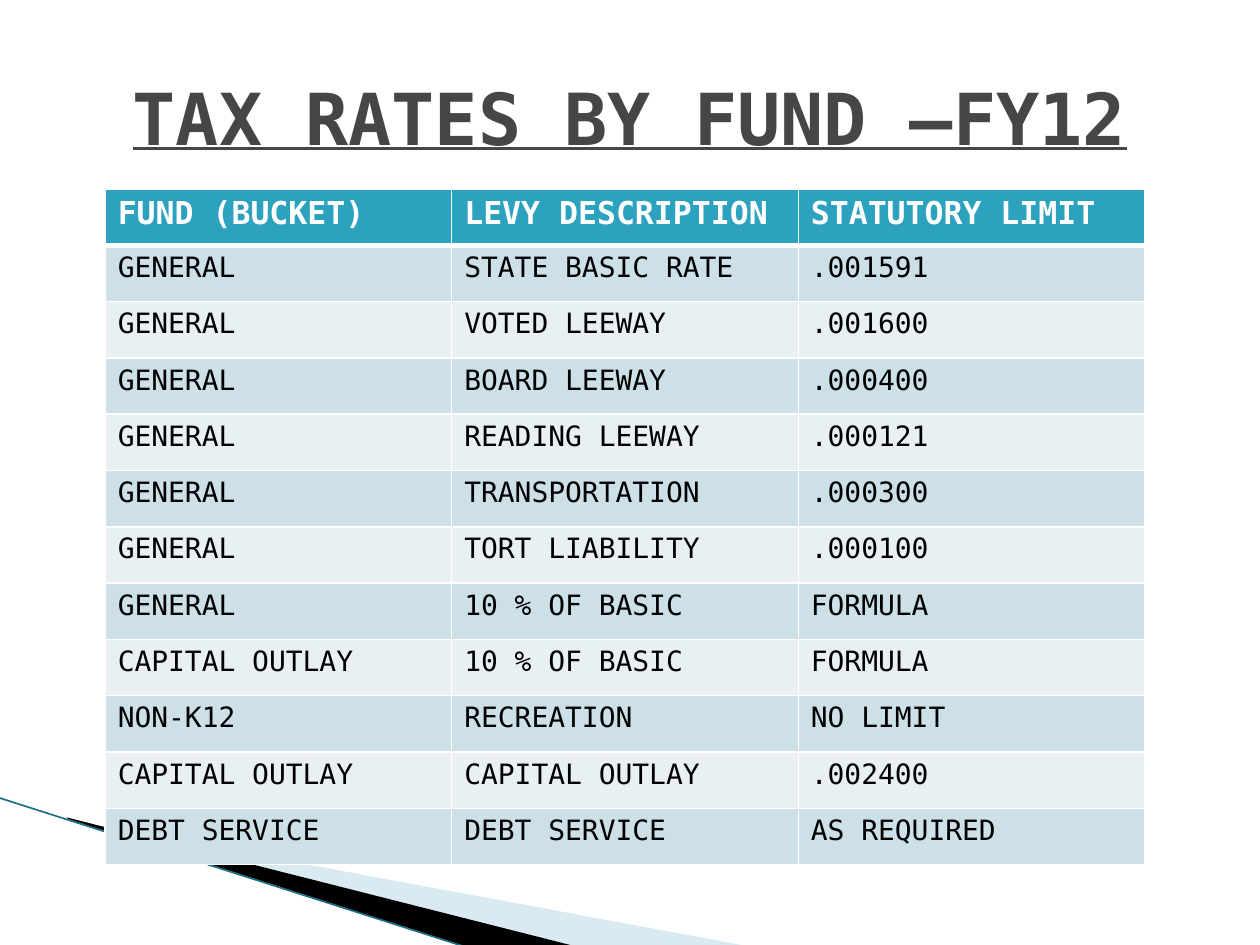
from dataclasses import dataclass

from lxml import etree
from pptx import Presentation
from pptx.dml.color import RGBColor
from pptx.enum.shapes import MSO_CONNECTOR
from pptx.enum.text import MSO_ANCHOR, PP_ALIGN
from pptx.oxml.ns import qn
from pptx.util import Cm, Pt

STRAIGHT = MSO_CONNECTOR.STRAIGHT
MIDDLE = MSO_ANCHOR.MIDDLE
CENTER = PP_ALIGN.CENTER


@dataclass(frozen=True)
class Theme:
    font: str = "DejaVu Sans Mono"
    title_size: int = 41
    header_size: int = 18
    body_size: int = 16
    title: str = "464646"
    header: str = "2DA2BF"
    bands: tuple = ("CDE0E8", "E8F0F4")
    white: str = "FFFFFF"
    black: str = "000000"
    pale: str = "A0CBDC"
    edge: str = "1C7085"


THEME = Theme()
ROWS = [
    ("FUND (BUCKET)", "LEVY DESCRIPTION", "STATUTORY LIMIT"),
    ("GENERAL", "STATE BASIC RATE", ".001591"),
    ("GENERAL", "VOTED LEEWAY", ".001600"),
    ("GENERAL", "BOARD LEEWAY", ".000400"),
    ("GENERAL", "READING LEEWAY", ".000121"),
    ("GENERAL", "TRANSPORTATION", ".000300"),
    ("GENERAL", "TORT LIABILITY", ".000100"),
    ("GENERAL", "10 % OF BASIC", "FORMULA"),
    ("CAPITAL OUTLAY", "10 % OF BASIC", "FORMULA"),
    ("NON-K12", "RECREATION", "NO LIMIT"),
    ("CAPITAL OUTLAY", "CAPITAL OUTLAY", ".002400"),
    ("DEBT SERVICE", "DEBT SERVICE", "AS REQUIRED"),
]


def rgb(color):
    return RGBColor.from_string(color)


def style(p, size, color, bold=False):
    f = p.font
    f.name, f.size, f.bold = THEME.font, Pt(size), bold
    f.color.rgb = rgb(color)


def add_wedge(s, points, color, alpha=None):
    start, *rest = [(Cm(x), Cm(y)) for x, y in points]
    builder = s.shapes.build_freeform(*start)
    builder.add_line_segments(rest, close=True)
    sp = builder.convert_to_shape()
    sp.shadow.inherit = False
    sp.fill.solid()
    sp.fill.fore_color.rgb = rgb(color)
    sp.line.fill.background()
    if alpha is not None:
        clr = sp.fill._xPr.find(".//" + qn("a:srgbClr"))
        etree.SubElement(clr, qn("a:alpha"), val=str(alpha * 1000))


def add_edge(s, x1, y1, x2, y2):
    line = s.shapes.add_connector(STRAIGHT, Cm(x1), Cm(y1), Cm(x2), Cm(y2))
    line.line.color.rgb = rgb(THEME.edge)
    line.line.width = Pt(0.95)
    etree.SubElement(line._element.spPr, qn("a:effectLst"))


def add_title(s, text):
    tf = s.shapes.add_textbox(Cm(1.27), Cm(0.76), Cm(22.86), Cm(3.18)).text_frame
    tf.word_wrap = True
    tf.vertical_anchor = MIDDLE
    p = tf.paragraphs[0]
    p.text = text
    p.alignment = CENTER
    style(p, THEME.title_size, THEME.title, bold=True)
    p.font.underline = True


def set_borders(cell, top, bottom):
    tc_pr = cell._tc.get_or_add_tcPr()
    widths = {"lnL": 1, "lnR": 1, "lnT": top, "lnB": bottom}
    for i, (tag, width) in enumerate(widths.items()):
        ln = etree.Element(qn("a:" + tag), w=str(Pt(width)))
        fill = etree.SubElement(ln, qn("a:solidFill"))
        etree.SubElement(fill, qn("a:srgbClr"), val=THEME.white)
        tc_pr.insert(i, ln)


def add_rate_table(s, rows):
    table = s.shapes.add_table(len(rows), len(rows[0]), Cm(2.12), Cm(3.81),
                               Cm(20.96), Cm(13.62)).table
    for r, row in enumerate(rows):
        is_header = r == 0
        for c, text in enumerate(row):
            cell = table.cell(r, c)
            cell.text = text
            p = cell.text_frame.paragraphs[0]
            if is_header:
                style(p, THEME.header_size, THEME.white, bold=True)
            else:
                style(p, THEME.body_size, THEME.black)
            set_borders(cell, 3 if r == 1 else 1, 3 if is_header else 1)
            cell.fill.solid()
            cell.fill.fore_color.rgb = rgb(
                THEME.header if is_header else THEME.bands[(r - 1) % 2])


def main():
    prs = Presentation()
    prs.slide_width, prs.slide_height = Cm(25.4), Cm(19.05)
    s = prs.slides.add_slide(prs.slide_layouts[6])

    # Corner decoration
    add_wedge(s, [(1.4, 16.54), (15.11, 19.08), (11.58, 19.08), (1.4, 16.51)],
              THEME.pale, alpha=40)
    add_wedge(s, [(1.35, 16.48), (11.61, 19.08), (9.45, 19.1), (1.37, 16.51)],
              THEME.black)
    add_edge(s, -0.03, 16.08, 9.42, 19.1)

    # Title and table
    add_title(s, "TAX RATES BY FUND –FY12")
    add_rate_table(s, ROWS)

    prs.save("out.pptx")


if __name__ == "__main__":
    main()
